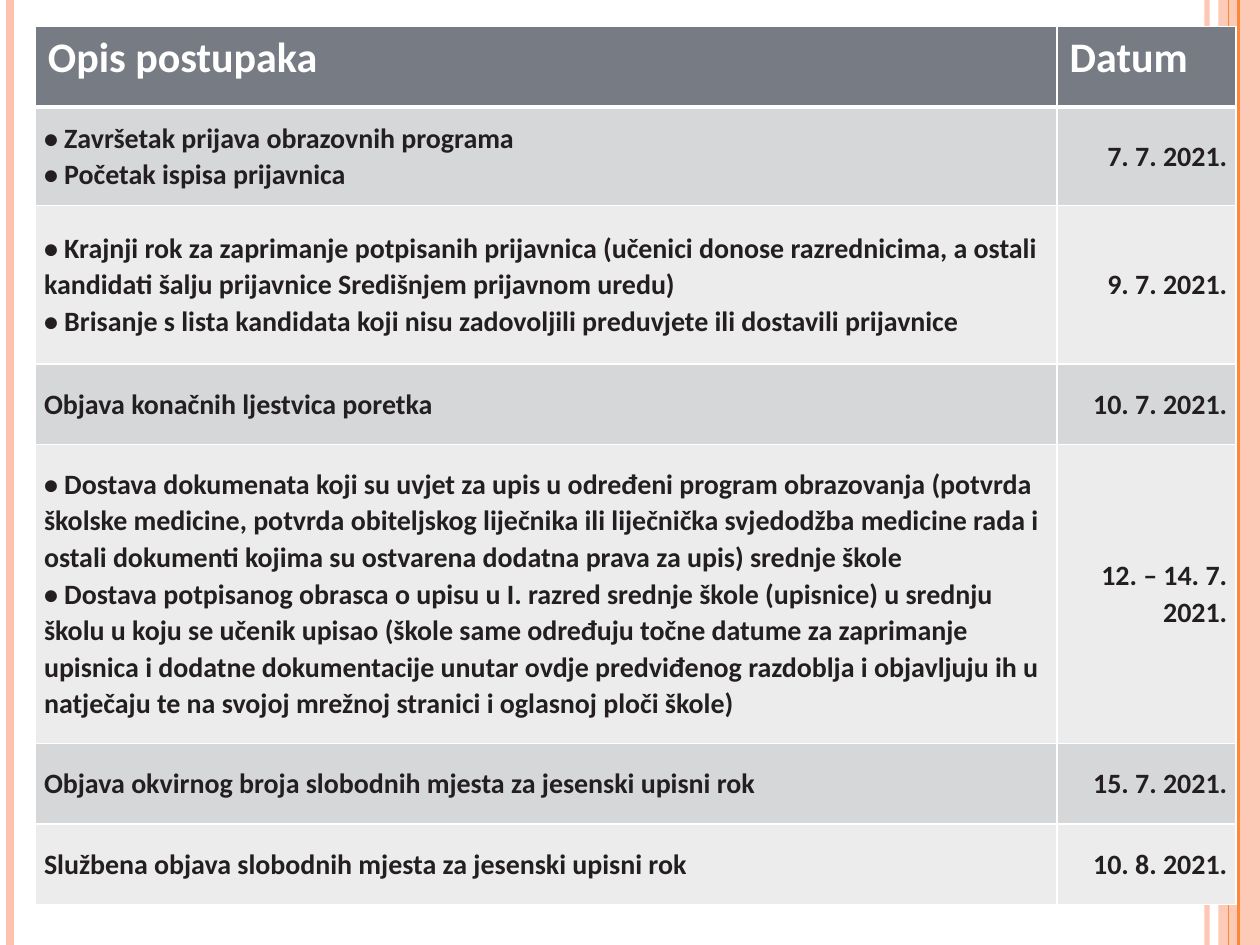
from lxml import etree
from pptx import Presentation
from pptx.dml.color import RGBColor
from pptx.enum.shapes import MSO_CONNECTOR, MSO_SHAPE
from pptx.enum.text import MSO_ANCHOR, PP_ALIGN
from pptx.oxml.ns import qn
from pptx.util import Inches, Pt

STRAIGHT = MSO_CONNECTOR.STRAIGHT
RECTANGLE = MSO_SHAPE.RECTANGLE
MIDDLE, TOP = MSO_ANCHOR.MIDDLE, MSO_ANCHOR.TOP
LEFT, RIGHT = PP_ALIGN.LEFT, PP_ALIGN.RIGHT

WHITE = RGBColor(0xFF, 0xFF, 0xFF)
INK = RGBColor(0x23, 0x1F, 0x20)
HEADER = RGBColor(0x77, 0x7C, 0x84)
BANDS = [RGBColor(0xD6, 0xD7, 0xD9), RGBColor(0xEC, 0xEC, 0xED)]
PEACH = RGBColor(0xFE, 0xC3, 0xAE)
ORANGE = RGBColor(0xFE, 0x86, 0x37)

COLUMNS = [8.11, 1.42]
ROWS = [
    (0.64, ["Opis postupaka"], "Datum"),
    (0.78, ["• Završetak prijava obrazovnih programa",
            "• Početak ispisa prijavnica"], "7. 7. 2021."),
    (1.26, ["• Krajnji rok za zaprimanje potpisanih prijavnica (učenici donose "
            "razrednicima, a ostali kandidati šalju prijavnice Središnjem "
            "prijavnom uredu)",
            "• Brisanje s lista kandidata koji nisu zadovoljili preduvjete ili "
            "dostavili prijavnice"], "9. 7. 2021."),
    (0.64, ["Objava konačnih ljestvica poretka"], "10. 7. 2021."),
    (2.37, ["• Dostava dokumenata koji su uvjet za upis u određeni program "
            "obrazovanja (potvrda školske medicine, potvrda obiteljskog "
            "liječnika ili liječnička svjedodžba medicine rada i ostali "
            "dokumenti kojima su ostvarena dodatna prava za upis) srednje škole",
            "• Dostava potpisanog obrasca o upisu u I. razred srednje škole "
            "(upisnice) u srednju školu u koju se učenik upisao (škole same "
            "određuju točne datume za zaprimanje upisnica i dodatne "
            "dokumentacije unutar ovdje predviđenog razdoblja i objavljuju ih u "
            "natječaju te na svojoj mrežnoj stranici i oglasnoj ploči škole)"],
     "12. – 14. 7. 2021."),
    (0.64, ["Objava okvirnog broja slobodnih mjesta za jesenski upisni rok"],
     "15. 7. 2021."),
    (0.64, ["Službena objava slobodnih mjesta za jesenski upisni rok"],
     "10. 8. 2021."),
]


def set_alpha(fill, percent):
    color = fill._xPr.find(qn("a:solidFill"))[0]
    etree.SubElement(color, qn("a:alpha"), val=str(percent * 1000))


def add_borders(cell, bottom):
    tcPr = cell._tc.get_or_add_tcPr()
    for side, width in (("L", 1), ("R", 1), ("T", 1), ("B", bottom)):
        ln = etree.SubElement(tcPr, qn(f"a:ln{side}"), w=str(Pt(width)))
        solid = etree.SubElement(ln, qn("a:solidFill"))
        etree.SubElement(solid, qn("a:srgbClr"), val=str(WHITE))


prs = Presentation()
prs.slide_width, prs.slide_height = Inches(10), Inches(7.5)
s = prs.slides.add_slide(prs.slide_layouts[6])

# Vertical stripes along both edges
band = s.shapes.add_shape(RECTANGLE, Inches(9.67), 0, Inches(0.33), prs.slide_height)
band.shadow.inherit = False
band.fill.solid()
band.fill.fore_color.rgb = PEACH
set_alpha(band.fill, 87)
band.line.fill.background()

for x, color, width, alpha in [(9.58, PEACH, 3, 93), (0.08, PEACH, 4.5, 100),
                               (9.83, ORANGE, 1.5, 100), (9.75, ORANGE, 0.75, 100)]:
    stripe = s.shapes.add_connector(STRAIGHT, Inches(x), 0, Inches(x), prs.slide_height)
    stripe.line.color.rgb = color
    stripe.line.width = Pt(width)
    if alpha < 100:
        set_alpha(stripe.line.fill, alpha)
    etree.SubElement(stripe._element.spPr, qn("a:effectLst"))

# Schedule table
height = sum(row[0] for row in ROWS)
table = s.shapes.add_table(len(ROWS), len(COLUMNS), Inches(0.28), Inches(0.21),
                           Inches(sum(COLUMNS)), Inches(height)).table
for column, width in zip(table.columns, COLUMNS):
    column.width = Inches(width)

for i, (row_height, steps, date) in enumerate(ROWS):
    is_header = i == 0
    table.rows[i].height = Inches(row_height)
    for j, lines in enumerate([steps, [date]]):
        cell = table.cell(i, j)
        add_borders(cell, 3 if is_header else 1)
        cell.fill.solid()
        cell.fill.fore_color.rgb = HEADER if is_header else BANDS[(i - 1) % 2]
        cell.vertical_anchor = TOP if is_header else MIDDLE
        if not is_header:
            cell.margin_left = cell.margin_right = cell.margin_top = Inches(0.07)
            cell.margin_bottom = Inches(0.08)
        tf = cell.text_frame
        tf.text = "\n".join(lines)
        for p in tf.paragraphs:
            p.alignment = RIGHT if j and not is_header else LEFT
            if not is_header:
                p.line_spacing = 1.07
            for r in p.runs:
                r.font.name = "Calibri"
                r.font.bold = True
                r.font.size = Pt(24 if is_header else 16)
                r.font.color.rgb = WHITE if is_header else INK

prs.save("out.pptx")
